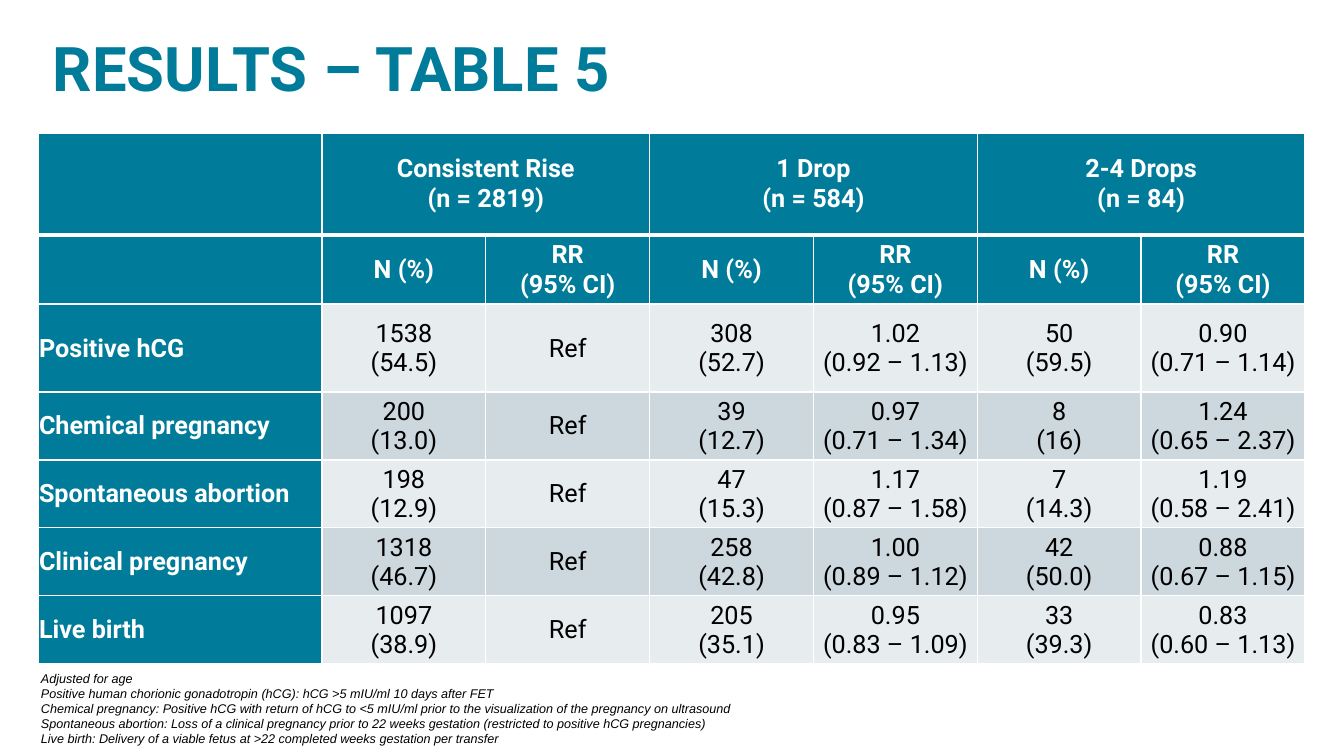
from dataclasses import dataclass
from lxml import etree
from pptx import Presentation, util as u
from pptx.dml.color import RGBColor
from pptx.enum import shapes, text
from pptx.oxml import ns


@dataclass(frozen=True)
class Theme:
    """Colours, fonts and type sizes."""
    teal: str = "007C9A"
    white: str = "FFFFFF"
    black: str = "000000"
    bands: tuple = ("E7ECEF", "CCD7DE")
    head: str = "Roboto"
    note: str = "Arial"
    big: int = 44
    mid: int = 18
    small: int = 9


T = Theme()
LEFT, MID = text.PP_ALIGN.LEFT, text.PP_ALIGN.CENTER
HEADS = ("Consistent Rise\n(n = 2819)", "1 Drop\n(n = 584)", "2-4 Drops\n(n = 84)")
SUBS = ("N (%)", "RR\n(95% CI)")
ROWS = (
    ("Positive hCG", "1538\n(54.5)", "Ref", "308\n(52.7)", "1.02\n(0.92 – 1.13)",
     "50\n(59.5)", "0.90\n(0.71 – 1.14)"),
    ("Chemical pregnancy", "200\n(13.0)", "Ref", "39\n(12.7)", "0.97\n(0.71 – 1.34)",
     "8\n(16)", "1.24\n(0.65 – 2.37)"),
    ("Spontaneous abortion", "198\n(12.9)", "Ref", "47\n(15.3)", "1.17\n(0.87 – 1.58)",
     "7\n(14.3)", "1.19\n(0.58 – 2.41)"),
    ("Clinical pregnancy", "1318\n(46.7)", "Ref", "258\n(42.8)", "1.00\n(0.89 – 1.12)",
     "42\n(50.0)", "0.88\n(0.67 – 1.15)"),
    ("Live birth", "1097\n(38.9)", "Ref", "205\n(35.1)", "0.95\n(0.83 – 1.09)",
     "33\n(39.3)", "0.83\n(0.60 – 1.13)"),
)
NOTES = """Adjusted for age
Positive human chorionic gonadotropin (hCG): hCG >5 mIU/ml 10 days after FET
Chemical pregnancy: Positive hCG with return of hCG to <5 mIU/ml prior to the visualization of the pregnancy on ultrasound
Spontaneous abortion: Loss of a clinical pregnancy prior to 22 weeks gestation (restricted to positive hCG pregnancies)
Live birth: Delivery of a viable fetus at >22 completed weeks gestation per transfer"""


def px(n):
    """Turn px into EMU."""
    return u.Emu(round(n * 914400 / 100.8))


def put(obj, vals):
    """Set each attribute named in vals."""
    for key, val in vals.items():
        setattr(obj, key, val)


def paint(fill, hue):
    """Fill with one colour."""
    fill.solid()
    fill.fore_color.rgb = RGBColor.from_string(hue)


def write(frame, words, hue, align=LEFT, **font):
    """Write one paragraph for each line of words."""
    for i, line in enumerate(words.split("\n")):
        para = frame.add_paragraph() if i else frame.paragraphs[0]
        para.text, para.alignment = line, align
        put(para.font, font)
        para.font.color.rgb = RGBColor.from_string(hue)


def edge(cell, top, base):
    """Draw white cell borders of the given top and base widths."""
    prop = cell._tc.get_or_add_tcPr()
    for side, wide in zip("LRTB", (1, 1, top, base)):
        line = etree.SubElement(prop, ns.qn("a:ln" + side), w=str(u.Pt(wide)))
        fill = etree.SubElement(line, ns.qn("a:solidFill"))
        etree.SubElement(fill, ns.qn("a:srgbClr"), val=T.white)


def title(slide, box):
    """Place the slide title."""
    frame = slide.shapes.add_textbox(*map(px, box)).text_frame
    put(frame, dict(word_wrap=True, vertical_anchor=text.MSO_ANCHOR.BOTTOM))
    write(frame, "RESULTS – TABLE 5", T.teal, name=T.head, size=u.Pt(T.big), bold=True)
    frame.paragraphs[0].line_spacing = 0.9


def notes(slide, box):
    """Place the footnotes on a white panel."""
    panel = slide.shapes.add_shape(shapes.MSO_SHAPE.RECTANGLE, *map(px, box))
    panel.shadow.inherit = False
    paint(panel.fill, T.white)
    panel.line.fill.background()
    frame = panel.text_frame
    put(frame, dict(word_wrap=True, vertical_anchor=text.MSO_ANCHOR.MIDDLE))
    write(frame, NOTES, T.black, name=T.note, size=u.Pt(T.small), italic=True)


def grid(slide, box):
    """Place the results table with its two header rows."""
    x, y, wide, high = box
    first, step = 284, 68
    tall = [102, 69, 88] + [step] * 4
    top = [""] + [word for head in HEADS for word in (head, "")]
    rows = [top, ["", *SUBS * len(HEADS)], *ROWS]
    table = slide.shapes.add_table(len(rows), len(top), *map(px, box)).table
    put(table, dict(first_row=False, horz_banding=False))
    for i, col in enumerate(table.columns):
        col.width = px((wide - first) / (len(top) - 1) if i else first)
    for row, size in zip(table.rows, tall):
        row.height = px(size)
    for r, row in enumerate(rows):
        for c, words in enumerate(row):
            cell = table.cell(r, c)
            head = r < 2 or c == 0
            edge(cell, 3 if r == 1 else 1, 1 if r else 3)
            paint(cell.fill, T.teal if head else T.bands[r % 2])
            side = 1 if r else 7
            put(cell, dict(margin_left=px(side), margin_right=px(side),
                           margin_top=px(1 if r else 0), margin_bottom=0,
                           vertical_anchor=text.MSO_ANCHOR.MIDDLE))
            if words:
                write(cell.text_frame, words, T.white if head else T.black,
                      MID if c else LEFT, name=T.head, size=u.Pt(T.mid), bold=head)
    for c in range(1, len(top), 2):
        table.cell(0, c).merge(table.cell(0, c + 1))


def main():
    """Build and save the slide."""
    deck = Presentation()
    put(deck, dict(slide_width=px(1344), slide_height=px(756)))
    slide = deck.slides.add_slide(deck.slide_layouts[6])
    notes(slide, (31, 665, 1274, 87))
    grid(slide, (38, 133, 1267, 531))
    title(slide, (43, 33, 1209, 77))
    deck.save("out.pptx")


if __name__ == "__main__":
    main()
